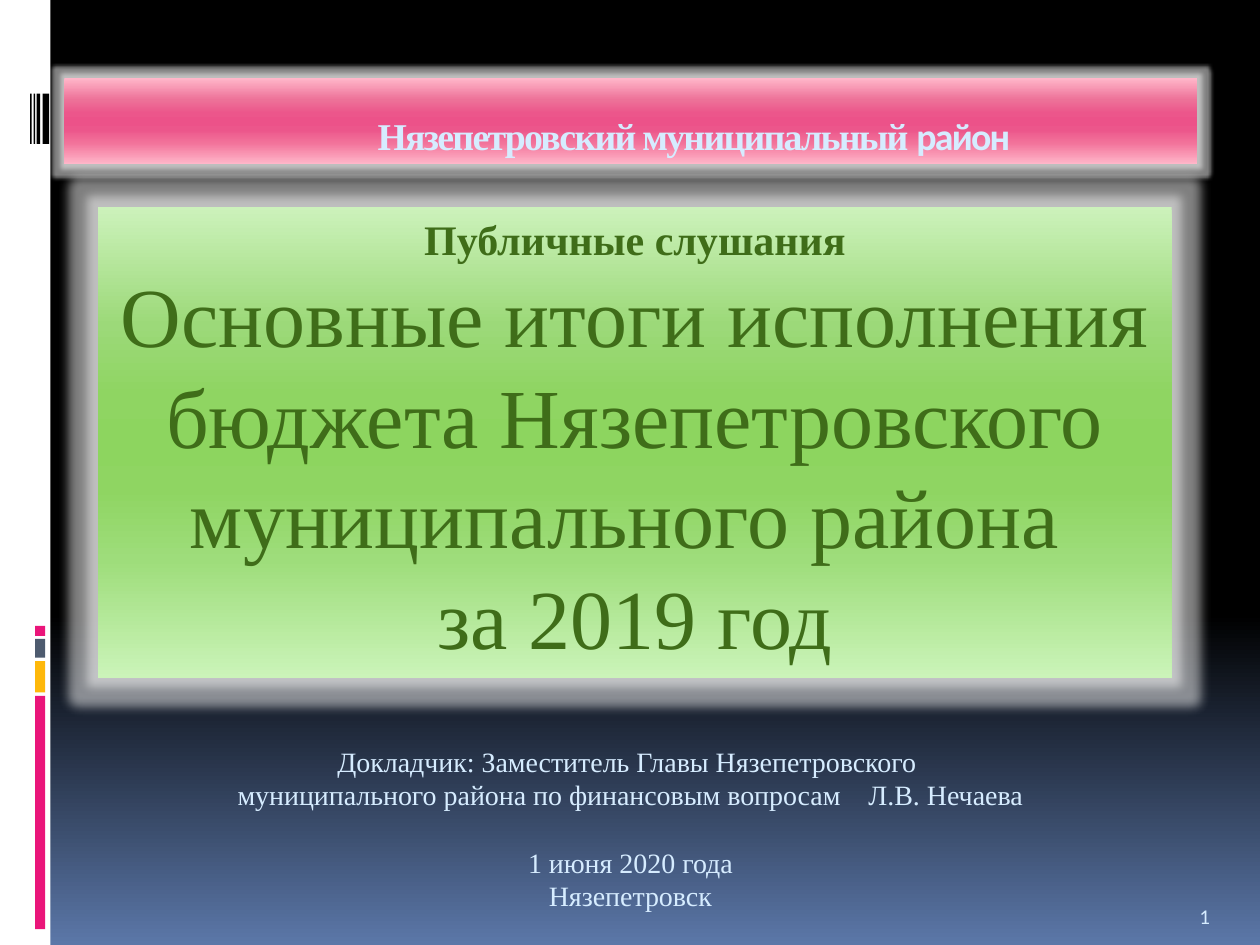
import pptx
import pptx.util
import pptx.dml.color
import pptx.enum.shapes
import pptx.enum.text
import pptx.oxml.ns
from lxml import etree

Cm, Pt = pptx.util.Cm, pptx.util.Pt
RGB = pptx.dml.color.RGBColor.from_string
Anchor = pptx.enum.text.MSO_ANCHOR
Align = pptx.enum.text.PP_ALIGN
qn = pptx.oxml.ns.qn

INK = {"white": "FFFFFF", "black": "000000", "pink": "EA157A",
       "gold": "FEB80A", "slate": "4E5B6F", "pale": "D6ECFF",
       "green": "3F6D19"}
SERIF, SANS = "Times New Roman", "Calibri"

# Gradients: position in percent, colour
NIGHT = [(0, "000000"), (65, "000000"), (100, "5B77A8")]
ROSE = [(0, "FFB6C9"), (25, "ED7198"), (40, "EC568B"), (50, "EC5289"),
        (60, "EC568B"), (75, "F2729A"), (100, "FFB6C9")]
LEAF = [(0, "CCF2BB"), (25, "9CD979"), (40, "8FD562"), (50, "8DD55F"),
        (60, "8FD562"), (75, "9EDD7B"), (100, "CBF4B9")]

# Side strip in cm: left, top, width, height, colour
STRIP = [(0, 0, 1.02, 19.05, "white")]
STRIP += [(0.71, top, 0.2, high, ink) for top, high, ink in [
    (14.03, 4.7, "pink"), (13.33, 0.63, "gold"),
    (12.88, 0.38, "slate"), (12.62, 0.2, "pink")]]
STRIP += [(left, 1.89, wide, 1.01, "black") for left, wide in [
    (0.86, 0.13), (0.74, 0.07), (0.68, 0.03), (0.61, 0.03)]]

# Paragraphs: runs of (text, size, font, bold), space before in points
HEAD = [([("Нязепетровский муниципальный ", 21.6, SERIF, True),
          ("район", 21.6, SANS, True)], 0)]
TOPIC = [([("Публичные слушания", 24, SERIF, True)], 0),
         ([("Основные итоги исполнения бюджета Нязепетровского "
            "муниципального района ", 48, SERIF, False)], 0),
         ([("за 2019 год", 48, SERIF, False)], 0)]
FOOT = [([(line, 16, SERIF, False)], gap) for line, gap in [
    ("Докладчик: Заместитель Главы Нязепетровского ", 0),
    ("муниципального района по финансовым вопросам    Л.В. Нечаева", 0),
    ("1 июня 2020 года", 19.2),
    ("Нязепетровск", 0)]]
PAGE = [([("1", 12, SANS, False)], 0)]


def grade(fill, root, stops):
    fill.gradient()
    fill.gradient_angle = 270
    items = root.find(".//" + qn("a:gsLst"))
    for old in list(items):
        items.remove(old)
    for pos, ink in stops:
        stop = etree.SubElement(items, qn("a:gs"), pos=str(pos * 1000))
        etree.SubElement(stop, qn("a:srgbClr"), val=ink)


def block(slide, *box):
    shape = slide.shapes.add_shape(
        pptx.enum.shapes.MSO_SHAPE.RECTANGLE, *map(Cm, box))
    shape.shadow.inherit = False
    shape.line.fill.background()
    return shape


def panel(slide, box, stops, size):
    shape = block(slide, *box)
    props = shape._element.spPr
    grade(shape.fill, props, stops)
    glow = etree.SubElement(props.find(qn("a:effectLst")), qn("a:glow"),
                            rad=str(int(Pt(size))))
    tint = etree.SubElement(glow, qn("a:srgbClr"), val=INK["white"])
    etree.SubElement(tint, qn("a:alpha"), val="50000")
    return shape


def label(slide, box):
    return slide.shapes.add_textbox(*map(Cm, box))


def write(shape, paras, ink, anchor, align=Align.CENTER, lead=None):
    frame = shape.text_frame
    frame.word_wrap = True
    frame.vertical_anchor = anchor
    for num, (runs, gap) in enumerate(paras):
        para = frame.add_paragraph() if num else frame.paragraphs[0]
        para.alignment = align
        para.space_before = Pt(gap)
        if lead:
            para.line_spacing = Pt(runs[0][1] * lead)
        for text, size, face, bold in runs:
            run = para.add_run()
            run.text = text
            run.font.size = Pt(size)
            run.font.name = face
            run.font.bold = bold
            run.font.color.rgb = RGB(INK[ink])
    return frame


def main():
    deck = pptx.Presentation()
    deck.slide_width, deck.slide_height = Cm(25.4), Cm(19.05)
    slide = deck.slides.add_slide(deck.slide_layouts[6])
    grade(slide.background.fill, slide._element, NIGHT)

    # Side strip
    for *box, ink in STRIP:
        bar = block(slide, *box)
        bar.fill.solid()
        bar.fill.fore_color.rgb = RGB(INK[ink])

    # District banner, its text set right of centre
    head = panel(slide, (1.3, 1.58, 22.83, 1.73), ROSE, 5)
    frame = write(head, HEAD, "pale", Anchor.BOTTOM)
    frame.margin_left = Cm(2.8)
    for run in frame.paragraphs[0].runs:
        run._r.get_or_add_rPr().set("spc", "-100")

    # Topic, speaker and page number
    topic = panel(slide, (1.98, 4.17, 21.64, 9.5), LEAF, 11)
    write(topic, TOPIC, "green", Anchor.TOP, lead=1.2)
    foot = label(slide, (1, 14.88, 23.42, 3.68))
    write(foot, FOOT, "pale", Anchor.TOP, lead=1.2)
    page = label(slide, (23.93, 17.83, 1.27, 1.02))
    write(page, PAGE, "pale", Anchor.BOTTOM, Align.LEFT)

    deck.save("out.pptx")


if __name__ == "__main__":
    main()
